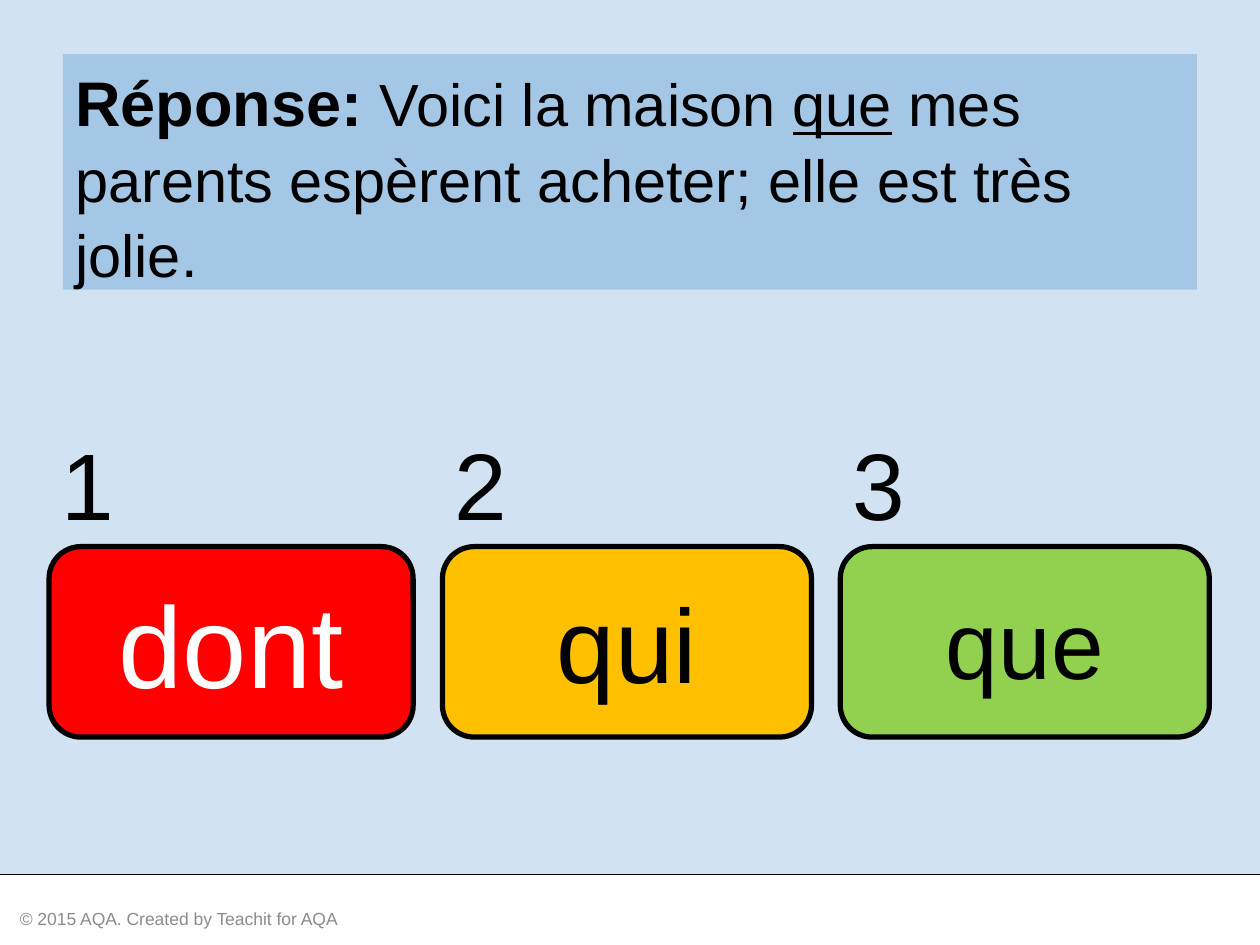
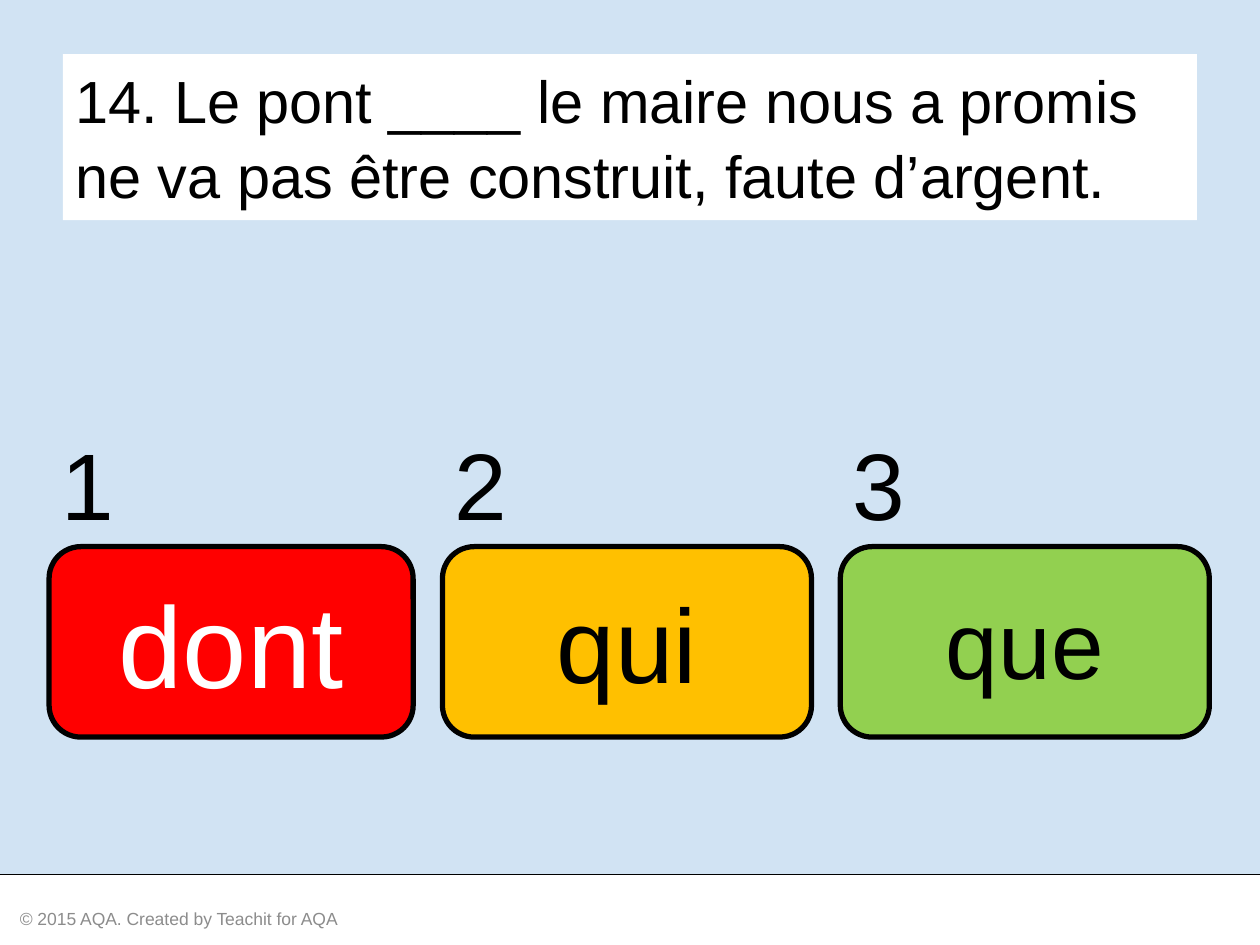
"""Builds two quiz slides on the French relative pronouns dont, qui and que."""
from lxml import etree
from pptx import Presentation
from pptx.dml.color import RGBColor
from pptx.enum.shapes import MSO_CONNECTOR, MSO_SHAPE
from pptx.enum.text import MSO_ANCHOR, PP_ALIGN
from pptx.oxml.ns import qn
from pptx.util import Cm, Pt

STRAIGHT = MSO_CONNECTOR.STRAIGHT
RECTANGLE, ROUNDED = MSO_SHAPE.RECTANGLE, MSO_SHAPE.ROUNDED_RECTANGLE
TOP, MIDDLE = MSO_ANCHOR.TOP, MSO_ANCHOR.MIDDLE
LEFT, CENTER = PP_ALIGN.LEFT, PP_ALIGN.CENTER

FONT = "Arial"
BLACK, WHITE, GREY = "000000", "FFFFFF", "8C8C8C"
SKY, ANSWER_BLUE = "D1E3F3", "A4C7E6"
RED, AMBER, GREEN = "FF0000", "FFC000", "92D050"

PAGE_WIDTH, PAGE_HEIGHT = 25.4, 19.05
FOOTER_TOP = 17.63
FOOTER = "© 2015 AQA. Created by Teachit for AQA"
SENTENCE_SPACING = 1.05

CHOICES = [
    ("dont", 0.99, 7.34, RED, WHITE, 66),
    ("qui", 8.92, 7.44, AMBER, BLACK, 60),
    ("que", 16.94, 7.44, GREEN, BLACK, 54),
]
ANSWER = [
    ("Réponse: ", {"size": Pt(36), "bold": True}),
    ("Voici la maison ", {}),
    ("que", {"underline": True}),
    (" mes parents espèrent acheter; elle est très jolie.", {}),
]
QUESTION = [
    ("14. Le pont ____ le maire nous a promis ne va pas être construit, "
     "faute d’argent.", {}),
]


def color(hex_code):
    """Return the colour for a hex string."""
    return RGBColor.from_string(hex_code)


def write(box, spans, size, ink=BLACK, align=LEFT, anchor=TOP, spacing=1.0):
    """Fill a box with one paragraph of formatted spans."""
    frame = box.text_frame
    frame.word_wrap = True
    frame.vertical_anchor = anchor
    para = frame.paragraphs[0]
    para.alignment = align
    para.line_spacing = spacing
    for words, changes in spans:
        span = para.add_run()
        span.text = words
        formats = {"name": FONT, "size": Pt(size), **changes}
        for name, value in formats.items():
            setattr(span.font, name, value)
        span.font.color.rgb = color(ink)


def add_panel(page, kind, place, fill, outline=None):
    """Add a filled shape, outlined in black if a width is given."""
    panel = page.shapes.add_shape(kind, *map(Cm, place))
    panel.shadow.inherit = False
    panel.fill.solid()
    panel.fill.fore_color.rgb = color(fill)
    if outline:
        panel.line.color.rgb = color(BLACK)
        panel.line.width = Pt(outline)
    else:
        panel.line.fill.background()
    return panel


def add_label(page, place, words, size, **style):
    """Add a text box holding one label."""
    box = page.shapes.add_textbox(*map(Cm, place))
    write(box, [(words, {})], size, **style)


def add_rule(page, top):
    """Add a thin black line across the page."""
    rule = page.shapes.add_connector(
        STRAIGHT, Cm(0), Cm(top), Cm(PAGE_WIDTH), Cm(top))
    rule.line.color.rgb = color(BLACK)
    rule.line.width = Pt(0.5)
    etree.SubElement(rule.element.spPr, qn("a:effectLst"))


def add_page(deck):
    """Add a page with the shared background and footer."""
    page = deck.slides.add_slide(deck.slide_layouts[6])
    page.background.fill.solid()
    page.background.fill.fore_color.rgb = color(SKY)
    band = (0, FOOTER_TOP, PAGE_WIDTH, PAGE_HEIGHT - FOOTER_TOP)
    add_panel(page, RECTANGLE, band, WHITE)
    add_rule(page, FOOTER_TOP)
    add_label(page, (0.15, 18.01, 10.16, 1.02), FOOTER, 10,
              ink=GREY, anchor=MIDDLE)
    return page


def add_sentence(page, spans, height, fill):
    """Add the sentence panel at the top of the page."""
    panel = add_panel(page, RECTANGLE, (1.27, 1.09, 22.86, height), fill)
    write(panel, spans, 34, spacing=SENTENCE_SPACING)


def add_choices(page):
    """Add the numbered answer buttons."""
    for number, choice in enumerate(CHOICES, 1):
        word, left, width, fill, ink, size = choice
        button = add_panel(page, ROUNDED, (left, 11.02, width, 3.84), fill, 3)
        write(button, [(word, {})], size, ink, CENTER, MIDDLE)
        add_label(page, (left, 8.46, 1.12, 2.57), str(number), 54,
                  align=CENTER)


def main():
    """Build and save the deck."""
    deck = Presentation()
    deck.slide_width, deck.slide_height = Cm(PAGE_WIDTH), Cm(PAGE_HEIGHT)
    sentences = [(ANSWER, 4.75, ANSWER_BLUE), (QUESTION, 3.35, WHITE)]
    for spans, height, fill in sentences:
        page = add_page(deck)
        add_sentence(page, spans, height, fill)
        add_choices(page)
    deck.save("out.pptx")


if __name__ == "__main__":
    main()
